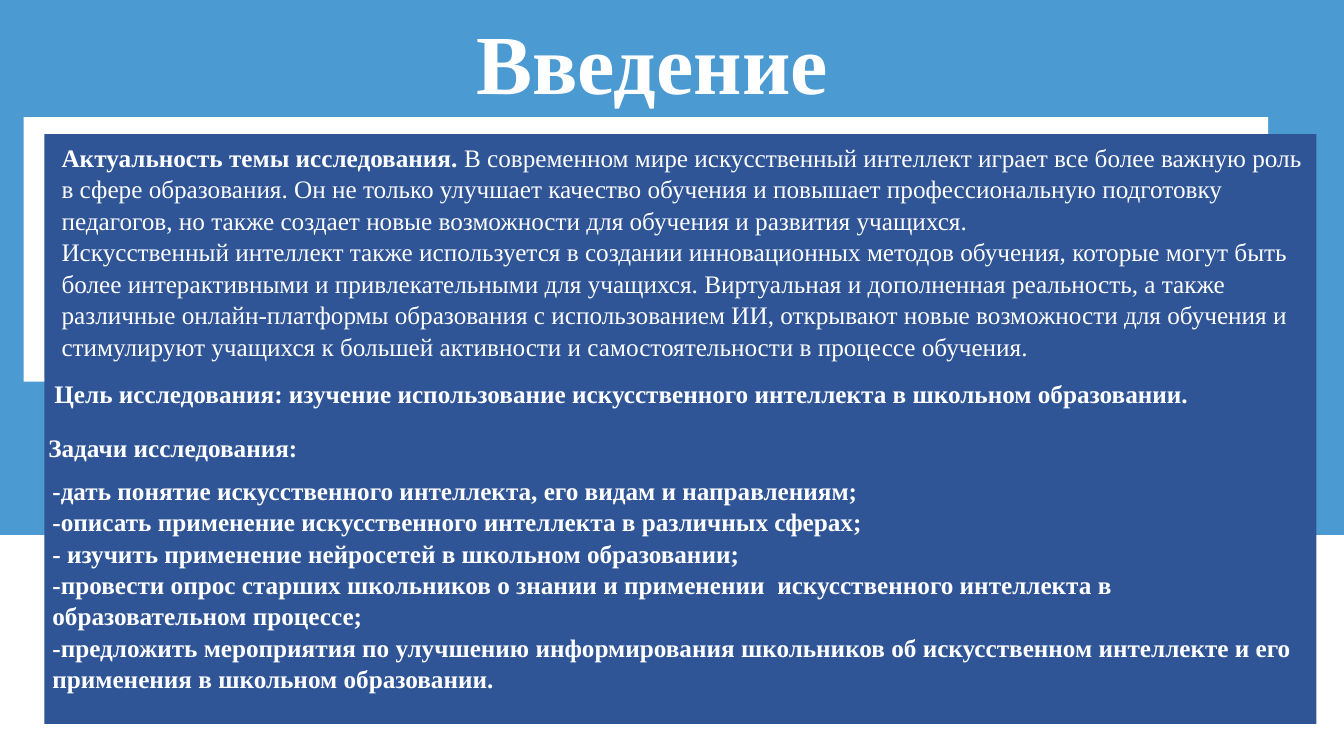
from lxml.etree import SubElement
from pptx import Presentation
from pptx.dml.color import RGBColor
from pptx.enum.shapes import MSO_SHAPE
from pptx.enum.text import MSO_ANCHOR, MSO_AUTO_SIZE, PP_ALIGN
from pptx.oxml.ns import qn
from pptx.util import Inches, Pt

COLORS = {"sky": "0070C0", "panel": "2F5597", "white": "FFFFFF"}
FONT = "Times New Roman"
TEXT_WIDTH = 92.85
LINE_HEIGHT = 4.04

RELEVANCE = [
    [("Актуальность темы исследования. ", True),
     ("В современном мире искусственный интеллект играет все более важную роль в сфере "
      "образования. Он не только улучшает качество обучения и повышает профессиональную "
      "подготовку педагогов, но также создает новые возможности для обучения и развития "
      "учащихся.", False)],
    [("Искусственный интеллект также используется в создании инновационных методов обучения, "
      "которые могут быть более интерактивными и привлекательными для учащихся. Виртуальная и "
      "дополненная реальность, а также различные онлайн-платформы образования с использованием "
      "ИИ, открывают новые возможности для обучения и стимулируют учащихся к большей "
      "активности и самостоятельности в процессе обучения.", False)],
]
GOAL = ("Цель исследования: изучение использование искусственного интеллекта "
        "в школьном образовании.")
TASKS = [
    "-дать понятие искусственного интеллекта, его видам и направлениям;",
    "-описать применение искусственного интеллекта в различных сферах;",
    "- изучить применение нейросетей в школьном образовании;",
    "-провести опрос старших школьников о знании и применении  искусственного интеллекта "
    "в образовательном процессе;",
    "-предложить мероприятия по улучшению информирования школьников об искусственном "
    "интеллекте и его применения в школьном образовании.",
]


def bold(*lines):
    return [[(line, True)] for line in lines]


class SlidePainter:
    def __init__(self, deck):
        self.page = deck.slides.add_slide(deck.slide_layouts[1])
        self.column = deck.slide_width / 100
        self.row = deck.slide_height / 100

    def area(self, left, top, width, height):
        return (round(left * self.column), round(top * self.row),
                round(width * self.column), round(height * self.row))

    def block(self, place, color, opacity=100):
        shape = self.page.shapes.add_shape(MSO_SHAPE.RECTANGLE, *self.area(*place))
        shape.shadow.inherit = False
        shape.fill.solid()
        shape.fill.fore_color.rgb = RGBColor.from_string(COLORS[color])
        shape.line.fill.background()
        if opacity < 100:
            tone = shape._element.spPr.find(".//" + qn("a:srgbClr"))
            SubElement(tone, qn("a:alpha"), val=str(opacity * 1000))

    def fill_text(self, box, paragraphs, size=18, align=PP_ALIGN.LEFT):
        frame = box.text_frame
        frame.word_wrap = True
        frame.auto_size = MSO_AUTO_SIZE.NONE
        frame.vertical_anchor = MSO_ANCHOR.TOP
        frame.margin_left = frame.margin_top = frame.margin_right = frame.margin_bottom = 0
        for number, runs in enumerate(paragraphs):
            para = frame.add_paragraph() if number else frame.paragraphs[0]
            para.alignment = align
            para.line_spacing = 1.04
            para.space_before = para.space_after = Pt(0)
            for text, strong in runs:
                span = para.add_run()
                span.text = text
                span.font.name = FONT
                span.font.size = Pt(size)
                span.font.bold = strong
                span.font.color.rgb = RGBColor.from_string(COLORS["white"])
        return frame

    def place_front(self, holder, place):
        holder.left, holder.top, holder.width, holder.height = self.area(*place)
        self.page.shapes._spTree.append(holder._element)

    def title(self, place, text):
        holder = self.page.shapes.title
        self.place_front(holder, place)
        self.fill_text(holder, bold(text), 60, PP_ALIGN.CENTER)

    def text(self, left, top, paragraphs, lines=1):
        place = self.area(left, top, TEXT_WIDTH, lines * LINE_HEIGHT)
        self.fill_text(self.page.shapes.add_textbox(*place), paragraphs)

    def body(self, left, top, paragraphs, lines):
        holder = self.page.placeholders[1]
        self.place_front(holder, (left, top, TEXT_WIDTH, lines * LINE_HEIGHT))
        for para in self.fill_text(holder, paragraphs).paragraphs:
            properties = para._p.get_or_add_pPr()
            properties.set("marL", "0")
            properties.set("indent", "0")
            SubElement(properties, qn("a:buNone"))


def main():
    deck = Presentation()
    deck.slide_width, deck.slide_height = Inches(13.33), Inches(7.5)
    painter = SlidePainter(deck)
    painter.block((0, 0, 100, 100), "sky", opacity=70)
    painter.block((1.75, 15.5, 92.6, 35), "white")
    painter.block((0, 70.8, 100, 29.2), "white")
    painter.block((3.3, 17.75, 94.65, 78), "panel")
    painter.title((7.2, 0.8, 82.65, 13.5), "Введение")
    painter.text(4.58, 18.67, RELEVANCE, lines=7)
    painter.text(4.05, 49.87, bold(GOAL))
    painter.text(3.6, 57.07, bold("Задачи исследования:"))
    painter.body(3.9, 62.67, bold(*TASKS), lines=8)
    deck.save("out.pptx")


if __name__ == "__main__":
    main()
